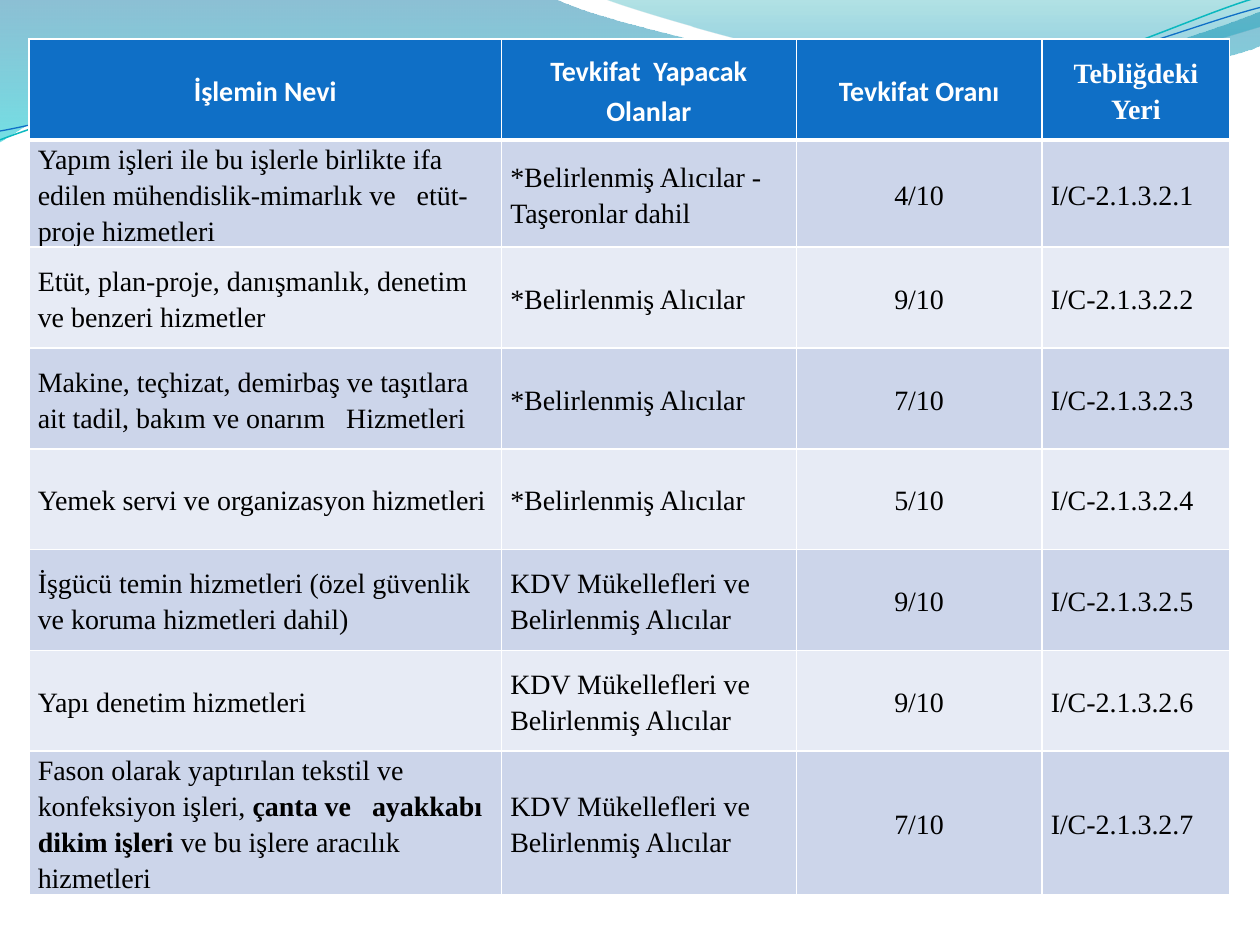
from dataclasses import dataclass
from math import cos, radians, sin
from typing import Optional

from lxml.etree import SubElement
from pptx import Presentation
from pptx.dml.color import RGBColor
from pptx.enum.text import MSO_ANCHOR as Anchor, PP_ALIGN as Align
from pptx.oxml import parse_xml
from pptx.oxml.ns import nsdecls, qn
from pptx.util import Inches, Pt

WHITE = RGBColor(0xFF, 0xFF, 0xFF)
BLACK = RGBColor(0, 0, 0)
BLUE = RGBColor(0x0F, 0x6F, 0xC6)
TEAL = RGBColor(0x0A, 0xB8, 0xBF)
BAND_DARK = RGBColor(0xCC, 0xD5, 0xEA)
BAND_LIGHT = RGBColor(0xE7, 0xEB, 0xF5)
WAVE_BLUE = RGBColor(0x00, 0x74, 0xA1)
WAVE_CYAN = RGBColor(0x00, 0xC6, 0xCF)
CREST_TEAL = RGBColor(0x00, 0xA1, 0xA9)
CREST_BLUE = RGBColor(0x00, 0x8B, 0xBF)
SANS, SERIF = "Calibri", "Times New Roman"


@dataclass
class Stop:
    position: float
    color: RGBColor
    opacity: int


@dataclass
class Wave:
    """Outline of points (2 numbers) and Bezier curves (6 numbers), in inches."""
    outline: list[tuple[float, ...]]
    stops: Optional[tuple[Stop, Stop]] = None
    line_color: Optional[RGBColor] = None
    line_width: float = 0
    tilt: float = 0
    center: tuple[float, float] = (0, 0)


@dataclass
class Service:
    """One table row; the part of the name between bars is bold."""
    name: str
    payer: str
    rate: str
    section: str


WAVES = [
    Wave([(0, 0), (4.4, -0.01), (4.76, 0.17, 6.64, 0.63, 7.58, 0.63),
          (8.53, 0.63, 9.58, 0.26, 10, 0.09), (10.01, 0.36),
          (9.83, 0.44, 8.7, 0.76, 7.46, 0.75), (6.22, 0.75, 3.82, 0.28, 2.57, 0.34),
          (1.29, 0.36, 0.46, 0.83, -0.01, 1.13), (0, 0)],
         stops=(Stop(0, WAVE_BLUE, 45), Stop(1, WAVE_CYAN, 55))),
    Wave([(4.79, -0.01), (5.09, 0.11, 6.82, 0.62, 7.69, 0.65),
          (8.56, 0.69, 9.61, 0.32, 10, 0.21), (10, 0), (4.79, -0.01)],
         stops=(Stop(0, CREST_TEAL, 30), Stop(0.8, CREST_BLUE, 45))),
    Wave([(0, 1.11), (0.48, 0.93, 1.58, 0.57, 2.77, 0.52),
          (3.95, 0.47, 5.93, 0.89, 7.13, 0.8), (8.33, 0.71, 9.38, 0.15, 9.98, -0.02)],
         line_color=TEAL, line_width=0.85, tilt=-2.7, center=(4.99, 0.58)),
    Wave([(0, 1.04), (0.47, 0.96, 1.64, 0.61, 2.83, 0.56),
          (4.03, 0.51, 5.97, 0.84, 7.17, 0.75), (8.36, 0.67, 9.41, 0.21, 10, 0.06)],
         line_color=BLUE, line_width=0.75, tilt=-2.7, center=(5, 0.59)),
]

HEADERS = ["İşlemin Nevi", "Tevkifat  Yapacak Olanlar", "Tevkifat Oranı", "Tebliğdeki Yeri"]
BUYERS = "*Belirlenmiş Alıcılar"
TAXPAYERS = "KDV Mükellefleri ve Belirlenmiş Alıcılar"
SERVICES = [
    Service("Yapım işleri ile bu işlerle birlikte ifa edilen mühendislik-mimarlık ve   etüt-proje hizmetleri",
            BUYERS + " - Taşeronlar dahil", "4/10", "I/C-2.1.3.2.1"),
    Service("Etüt, plan-proje, danışmanlık, denetim ve benzeri hizmetler",
            BUYERS, "9/10", "I/C-2.1.3.2.2"),
    Service("Makine, teçhizat, demirbaş ve taşıtlara ait tadil, bakım ve onarım   Hizmetleri",
            BUYERS, "7/10", "I/C-2.1.3.2.3"),
    Service("Yemek servi ve organizasyon hizmetleri", BUYERS, "5/10", "I/C-2.1.3.2.4"),
    Service("İşgücü temin hizmetleri (özel güvenlik ve koruma hizmetleri dahil)",
            TAXPAYERS, "9/10", "I/C-2.1.3.2.5"),
    Service("Yapı denetim hizmetleri", TAXPAYERS, "9/10", "I/C-2.1.3.2.6"),
    Service("Fason olarak yaptırılan tekstil ve konfeksiyon işleri, |çanta ve   ayakkabı dikim işleri |"
            "ve bu işlere aracılık hizmetleri", TAXPAYERS, "7/10", "I/C-2.1.3.2.7"),
]
COLUMN_WIDTHS = [3.75, 2.34, 1.95, 1.49]
ROW_HEIGHT = 0.8
TABLE_HEIGHT = 6.95
RATE_COLUMN = 2


def level_points(wave: Wave) -> list[tuple[int, int]]:
    """All points and curve handles, with the tilt of the wave taken out."""
    angle = radians(-wave.tilt)
    center_x, center_y = wave.center
    points = []
    for segment in wave.outline:
        for x, y in zip(segment[::2], segment[1::2]):
            dx, dy = x - center_x, y - center_y
            points.append((Inches(center_x + dx * cos(angle) - dy * sin(angle)),
                           Inches(center_y + dx * sin(angle) + dy * cos(angle))))
    return points


def bend_curves(shape, outline: list[tuple[float, ...]]) -> None:
    """Join the three lines of each curve segment into one Bezier curve."""
    lines = iter(list(shape._element.iter(qn("a:lnTo"))))
    for segment in outline[1:]:
        first = next(lines)
        if len(segment) == 2:
            continue
        curve = parse_xml(f'<a:cubicBezTo {nsdecls("a")}/>')
        first.addprevious(curve)
        for line in (first, next(lines), next(lines)):
            curve.append(line[0])
            line.getparent().remove(line)


def draw_wave(slide, wave: Wave) -> None:
    start, *rest = level_points(wave)
    builder = slide.shapes.build_freeform(*start)
    builder.add_line_segments(rest, close=wave.stops is not None)
    shape = builder.convert_to_shape()
    bend_curves(shape, wave.outline)
    shape.rotation = wave.tilt
    shape.shadow.inherit = False
    if wave.stops is None:
        shape.fill.background()
        shape.line.color.rgb = wave.line_color
        shape.line.width = Pt(wave.line_width)
        return
    shape.line.fill.background()
    shape.fill.gradient()
    shape.fill.gradient_angle = 270
    for gradient_stop, stop in zip(shape.fill.gradient_stops, wave.stops):
        gradient_stop.position = stop.position
        gradient_stop.color.rgb = stop.color
    colors = list(shape._element.spPr.iter(qn("a:srgbClr")))
    for color, stop in zip(colors, wave.stops):
        SubElement(color, qn("a:alpha"), val=str(stop.opacity * 1000))


def write_text(cell, text: str, *, font: str = SERIF, color: RGBColor = BLACK,
               bold: bool = False, align: Align = Align.LEFT) -> None:
    paragraph = cell.text_frame.paragraphs[0]
    paragraph.alignment = align
    paragraph.line_spacing = 1.15
    for index, part in enumerate(text.split("|")):
        run = paragraph.add_run()
        run.text = part
        run.font.name = font
        run.font.size = Pt(16)
        run.font.bold = bold or index % 2 == 1
        run.font.color.rgb = color


def format_cell(cell, fill: RGBColor, *, top: float = 1, bottom: float = 1) -> None:
    cell.vertical_anchor = Anchor.MIDDLE
    cell.margin_left = cell.margin_right = Inches(0.07)
    cell.margin_top = cell.margin_bottom = 0
    cell.fill.solid()
    cell.fill.fore_color.rgb = fill
    properties = cell._tc.get_or_add_tcPr()
    for index, (side, width) in enumerate((("L", 1), ("R", 1), ("T", top), ("B", bottom))):
        properties.insert(index, parse_xml(
            f'<a:ln{side} {nsdecls("a")} w="{Pt(width)}"><a:solidFill>'
            f'<a:srgbClr val="{WHITE}"/></a:solidFill></a:ln{side}>'))


def draw_table(slide) -> None:
    frame = slide.shapes.add_table(
        len(SERVICES) + 1, len(HEADERS), Inches(0.23), Inches(0.31),
        Inches(sum(COLUMN_WIDTHS)), Inches(TABLE_HEIGHT))
    table = frame.table
    table.horz_banding = False
    for column, width in zip(table.columns, COLUMN_WIDTHS):
        column.width = Inches(width)
    for row in table.rows:
        row.height = Inches(ROW_HEIGHT)
    frame.height = Inches(TABLE_HEIGHT)

    # Header row
    for column, header in enumerate(HEADERS):
        cell = table.cell(0, column)
        format_cell(cell, BLUE, bottom=3)
        write_text(cell, header, font=SERIF if header == HEADERS[-1] else SANS,
                   color=WHITE, bold=True, align=Align.CENTER)

    # Service rows
    for row, service in enumerate(SERVICES, start=1):
        values = (service.name, service.payer, service.rate, service.section)
        for column, value in enumerate(values):
            cell = table.cell(row, column)
            format_cell(cell, BAND_DARK if row % 2 else BAND_LIGHT, top=3 if row == 1 else 1)
            write_text(cell, value, align=Align.CENTER if column == RATE_COLUMN else Align.LEFT)


def main() -> None:
    deck = Presentation()
    deck.slide_width, deck.slide_height = Inches(10), Inches(7.5)
    slide = deck.slides.add_slide(deck.slide_layouts[6])
    slide.background.fill.solid()
    slide.background.fill.fore_color.rgb = WHITE
    for wave in WAVES:
        draw_wave(slide, wave)
    draw_table(slide)
    deck.save("out.pptx")


if __name__ == "__main__":
    main()
